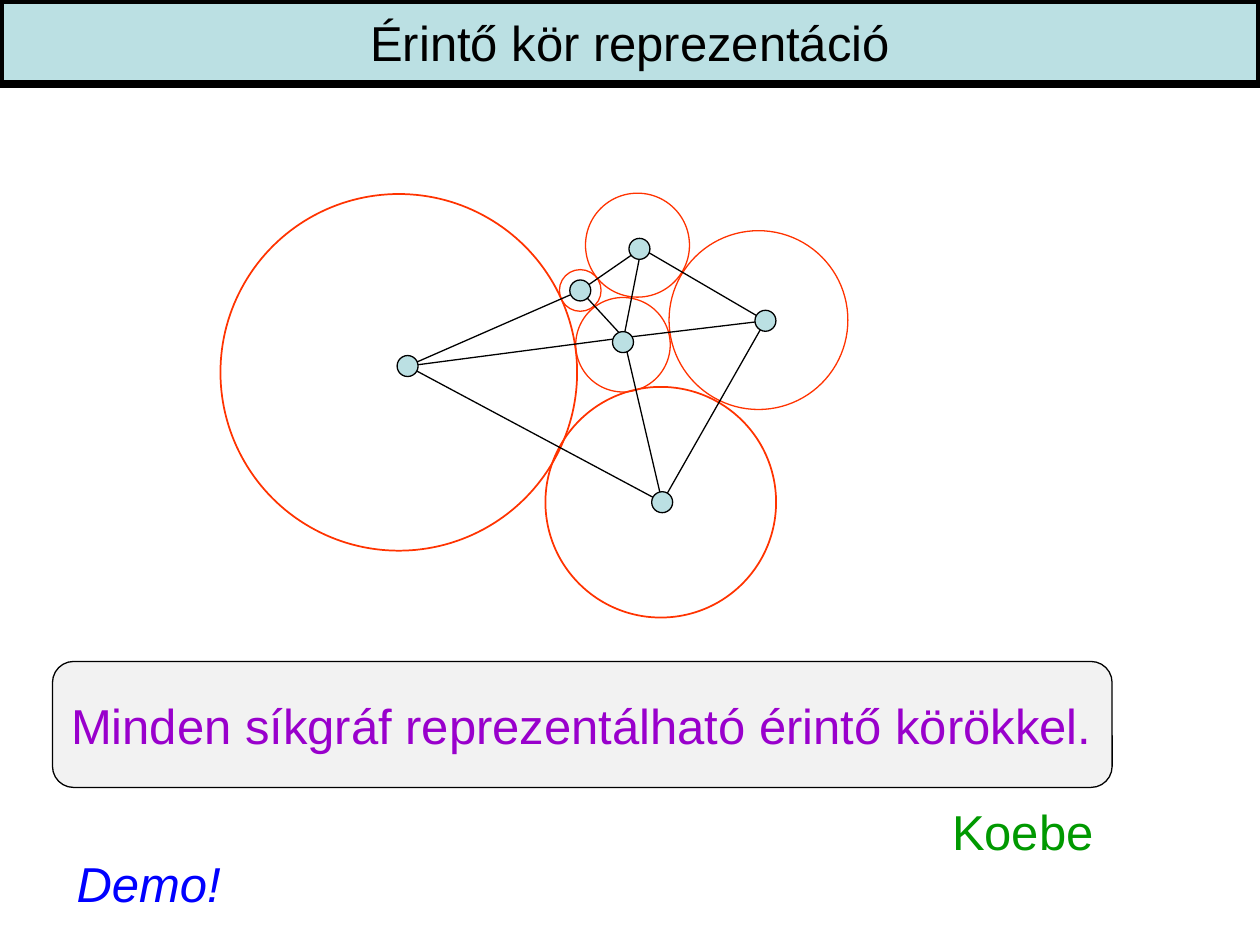
from lxml.etree import SubElement
from pptx import Presentation
from pptx.dml.color import RGBColor
from pptx.enum.shapes import MSO_CONNECTOR, MSO_SHAPE
from pptx.enum.text import MSO_ANCHOR, MSO_AUTO_SIZE, PP_ALIGN
from pptx.oxml.ns import qn
from pptx.util import Pt

PALE_BLUE, BLACK, ORANGE = "BBE0E3", "000000", "FF3300"
NODE_RADIUS = 6

# name: circle centre x, y, radius, line width
CIRCLES = {
    "inner": (230, 86.8, 27, 0.75),
    "bottom": (251.6, 176.8, 65.9, 1),
    "left": (101.9, 102.6, 101.9, 1),
    "right": (307.4, 72.7, 51.1, 0.75),
    "top": (238.3, 29.9, 29.7, 0.75),
    "small": (205.6, 55.8, 11.9, 0.75),
}
# name: node centre x, y
NODES = {
    "top": (239.4, 32),
    "small": (205.6, 55.8),
    "inner": (230, 85.3),
    "right": (311.4, 73.1),
    "left": (106.9, 99),
    "bottom": (252.4, 176.8),
}
# Edges meet slightly off the centre of these two nodes
EDGE_ENDS = {**NODES, "inner": (230.4, 82.8), "top": (240.5, 31.7)}
EDGES = [
    ("top", "inner"), ("top", "small"), ("small", "inner"),
    ("inner", "bottom"), ("inner", "right"), ("right", "bottom"),
    ("small", "left"), ("left", "bottom"), ("inner", "left"),
    ("top", "right"),
]


def color(hex_value):
    return RGBColor.from_string(hex_value)


def add_outlined(slide, kind, box, line, width, fill=None):
    shape = slide.shapes.add_shape(kind, *map(Pt, box))
    shape.shadow.inherit = False
    if fill:
        shape.fill.solid()
        shape.fill.fore_color.rgb = color(fill)
    else:
        shape.fill.background()
    shape.line.color.rgb = color(line)
    shape.line.width = Pt(width)
    return shape


def write(shape, text, hex_value, align=PP_ALIGN.LEFT, wrap=False, italic=None):
    frame = shape.text_frame
    frame.word_wrap = wrap
    paragraph = frame.paragraphs[0]
    paragraph.alignment = align
    run = paragraph.add_run()
    run.text = text
    run.font.name = "Arial"
    run.font.size = Pt(28)
    run.font.italic = italic
    run.font.color.rgb = color(hex_value)
    return paragraph


def add_circle(slide, x, y, radius, line, width, fill=None):
    box = (x - radius, y - radius, 2 * radius, 2 * radius)
    add_outlined(slide, MSO_SHAPE.OVAL, box, line, width, fill)


def add_edge(slide, start, end):
    edge = slide.shapes.add_connector(
        MSO_CONNECTOR.STRAIGHT, *map(Pt, (*start, *end)))
    edge.line.color.rgb = color(BLACK)
    edge.line.width = Pt(0.75)
    SubElement(edge._element.spPr, qn("a:effectLst"))


def add_circle_graph(slide, left, top):
    """Touching circles, with the planar graph they represent on top."""
    for x, y, radius, width in CIRCLES.values():
        add_circle(slide, left + x, top + y, radius, ORANGE, width)
    for ends in EDGES:
        start, end = [(left + EDGE_ENDS[name][0], top + EDGE_ENDS[name][1])
                      for name in ends]
        add_edge(slide, start, end)
    for x, y in NODES.values():
        add_circle(slide, left + x, top + y, NODE_RADIUS, BLACK, 0.75, PALE_BLUE)


def add_theorem(slide, box):
    theorem = add_outlined(
        slide, MSO_SHAPE.ROUNDED_RECTANGLE, box, BLACK, 0.75, "F2F2F2")
    theorem.adjustments[0] = 0.167
    theorem.text_frame.vertical_anchor = MSO_ANCHOR.MIDDLE
    write(theorem, "Minden síkgráf reprezentálható érintő körökkel.", "9900CC")


def add_title(slide, box):
    title = add_outlined(slide, MSO_SHAPE.RECTANGLE, box, BLACK, 4.5, PALE_BLUE)
    title.text_frame.vertical_anchor = MSO_ANCHOR.MIDDLE
    write(title, "Érintő kör reprezentáció", BLACK, PP_ALIGN.CENTER, wrap=True)


def add_label(slide, box, text, hex_value, italic=None, spacing=None):
    label = slide.shapes.add_textbox(*map(Pt, box))
    paragraph = write(label, text, hex_value, italic=italic)
    paragraph.line_spacing = spacing
    label.text_frame.auto_size = MSO_AUTO_SIZE.SHAPE_TO_FIT_TEXT


def main():
    presentation = Presentation()
    presentation.slide_width, presentation.slide_height = Pt(720), Pt(540)
    slide = presentation.slides.add_slide(presentation.slide_layouts[6])
    add_circle_graph(slide, 126, 110.2)
    add_theorem(slide, (30, 378, 605.5, 72))
    add_label(slide, (529.2, 454.3, 104.4, 41), " Koebe", "009900")
    add_title(slide, (0, 0, 720, 48))
    add_label(slide, (36.7, 457.2, 97.9, 59.8), "Demo!", "0000FF",
              italic=True, spacing=1.8)
    presentation.save("out.pptx")


if __name__ == "__main__":
    main()
